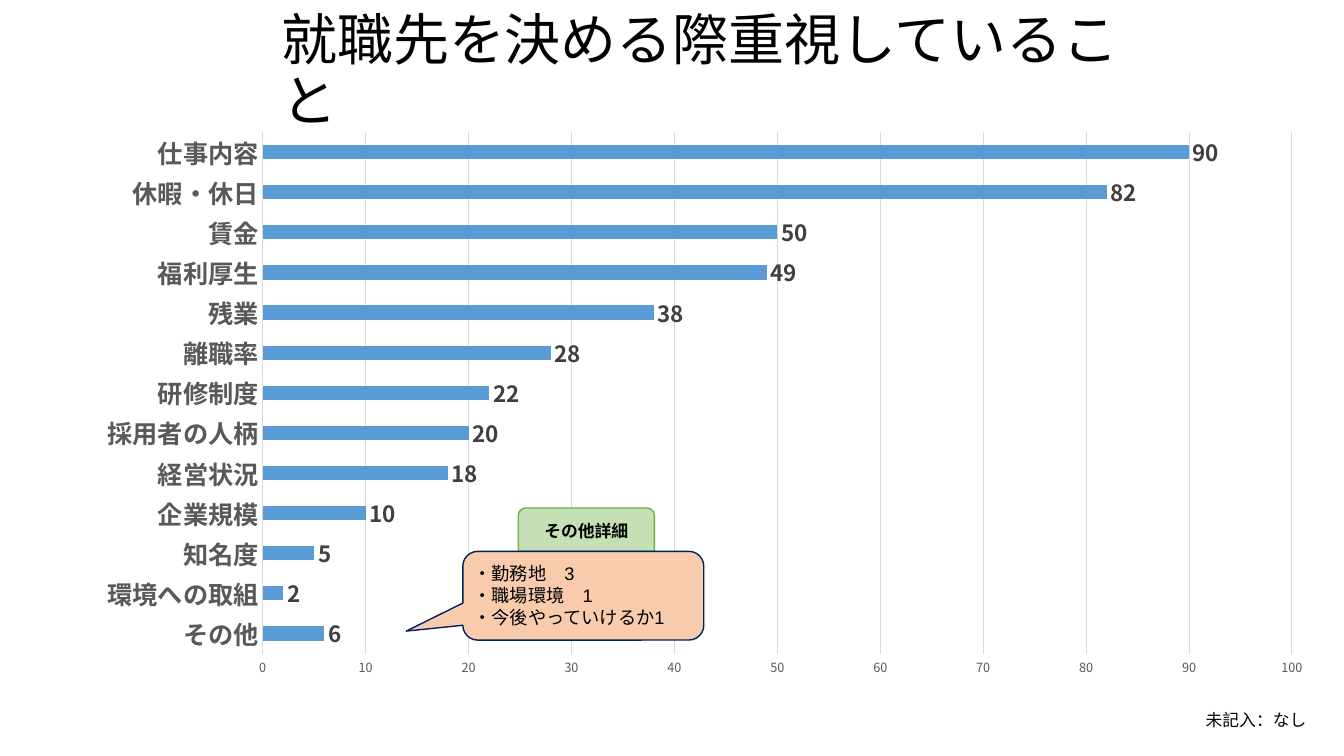
from pptx import Presentation
from pptx.chart.data import CategoryChartData as Data
from pptx.dml.color import RGBColor as Rgb
from pptx.enum.chart import XL_CHART_TYPE as Kind, XL_LABEL_POSITION as Pos, XL_TICK_MARK as Tick
from pptx.enum.shapes import MSO_SHAPE as Shape
from pptx.enum.text import MSO_ANCHOR as Anchor, PP_ALIGN as Align
from pptx.oxml import parse_xml
from pptx.oxml.ns import nsdecls, qn
from pptx.util import Inches, Pt

NOTO = "Noto Sans CJK JP"
SCORES = [
    ("その他", 6), ("環境への取組", 2), ("知名度", 5), ("企業規模", 10),
    ("経営状況", 18), ("採用者の人柄", 20), ("研修制度", 22), ("離職率", 28),
    ("残業", 38), ("福利厚生", 49), ("賃金", 50), ("休暇・休日", 82), ("仕事内容", 90),
]


def color(hex_):
    return Rgb.from_string(hex_)


def style(font, size, hue="000000", bold=False, face=NOTO):
    font.name, font.size, font.bold = face, Pt(size), bold
    font.color.rgb = color(hue)


def inches(box):
    return [Inches(v) for v in box]


def match_asian(root):
    """Use each Latin typeface for East Asian text too."""
    for latin in list(root.iter(qn("a:latin"))):
        face = latin.get("typeface")
        latin.addnext(parse_xml(f'<a:ea {nsdecls("a")} typeface="{face}"/>'))


def write(frame, paras, size, **look):
    """Fill a frame; each paragraph is a list of lines."""
    frame.word_wrap = True
    for i, lines in enumerate(paras):
        para = frame.paragraphs[0] if i == 0 else frame.add_paragraph()
        for j, line in enumerate(lines):
            if j:
                para.add_line_break()
            run = para.add_run()
            run.text = line
            style(run.font, size, **look)


def add_text(slide, box, paras, size, **look):
    frame = slide.shapes.add_textbox(*inches(box)).text_frame
    write(frame, paras, size, **look)
    return frame


def add_panel(slide, kind, box, fill, line):
    panel = slide.shapes.add_shape(kind, *inches(box))
    panel.shadow.inherit = False
    panel.fill.solid()
    panel.fill.fore_color.rgb = color(fill)
    panel.line.color.rgb = color(line)
    panel.line.width = Pt(1)
    return panel


def add_title(slide, box):
    frame = add_text(slide, box, [["就職先を決める際重視していること"]], 40)
    frame.vertical_anchor = Anchor.MIDDLE
    frame.paragraphs[0].line_spacing = 0.9


def set_plot(chart, x, y, w, h):
    """Fix the inner plot area, as shares of the chart."""
    area = chart.element.find(".//" + qn("c:plotArea"))
    for old in area.findall(qn("c:layout")):
        area.remove(old)
    parts = "".join(f'<c:{k} val="{v}"/>' for k, v in zip("xywh", (x, y, w, h)))
    area.insert(0, parse_xml(
        f'<c:layout {nsdecls("c")}><c:manualLayout><c:layoutTarget val="inner"/>'
        f'<c:xMode val="edge"/><c:yMode val="edge"/>{parts}</c:manualLayout></c:layout>'))


def add_bars(slide, box):
    data = Data()
    data.categories = [name for name, _ in SCORES]
    data.add_series("Series 1", [score for _, score in SCORES])
    chart = slide.shapes.add_chart(Kind.BAR_CLUSTERED, *inches(box), data).chart
    chart.has_legend = chart.has_title = False
    style(chart.font, 10)
    set_plot(chart, 0.146, 0.025, 0.83, 0.914)

    # Bars and value labels
    plot = chart.plots[0]
    plot.gap_width, plot.vary_by_categories = 182, False
    bars = plot.series[0].format.fill
    bars.solid()
    bars.fore_color.rgb = color("5B9BD5")
    plot.has_data_labels = True
    labels = plot.data_labels
    labels.show_value, labels.position = True, Pos.OUTSIDE_END
    style(labels.font, 16, "404040", True)

    # Axes
    cats, vals = chart.category_axis, chart.value_axis
    for axis in (cats, vals):
        axis.major_tick_mark = axis.minor_tick_mark = Tick.NONE
    style(cats.tick_labels.font, 18, "595959", True)
    style(vals.tick_labels.font, 9, "595959")
    vals.minimum_scale, vals.maximum_scale, vals.major_unit = 0, 100, 10
    vals.has_major_gridlines = True
    vals.format.line.fill.background()
    for rule in (cats.format.line, vals.major_gridlines.format.line):
        rule.color.rgb = color("D9D9D9")
        rule.width = Pt(0.75)
    match_asian(chart.element)


def add_detail(slide, box):
    x, y, w, h = box
    tab_h = 0.43
    # Heading tab
    tab = add_panel(slide, Shape.ROUND_2_SAME_RECTANGLE,
                    (x + 0.55, y, 1.35, tab_h), "C5E0B4", "70AD47")
    frame = tab.text_frame
    frame.vertical_anchor = Anchor.MIDDLE
    write(frame, [["その他詳細"]], 12, bold=True)
    frame.paragraphs[0].alignment = Align.CENTER
    # Callout pointing at the last bar
    note = add_panel(slide, Shape.ROUNDED_RECTANGULAR_CALLOUT,
                     (x, y + tab_h, w, h - tab_h), "F8CBAD", "002060")
    for i, value in enumerate((-0.735, 0.399, 0.167)):
        note.adjustments[i] = value
    add_text(slide, (x + 0.01, y + 0.49, w + 0.04, 0.76),
             [["・勤務地　3", "・職場環境　1"], ["・今後やっていけるか1"]], 13, face="Arial")


def main():
    deck = Presentation()
    deck.slide_width, deck.slide_height = Inches(13.33), Inches(7.5)
    slide = deck.slides.add_slide(deck.slide_layouts[6])
    add_title(slide, (2.69, 0, 8.59, 1.45))
    add_text(slide, (11.86, 6.99, 1.24, 0.3), [["未記入：なし"]], 12)
    add_bars(slide, (0.81, 1.17, 12.3, 5.66))
    add_detail(slide, (4.59, 5.04, 2.39, 1.31))
    match_asian(slide.element)
    deck.save("out.pptx")


if __name__ == "__main__":
    main()
